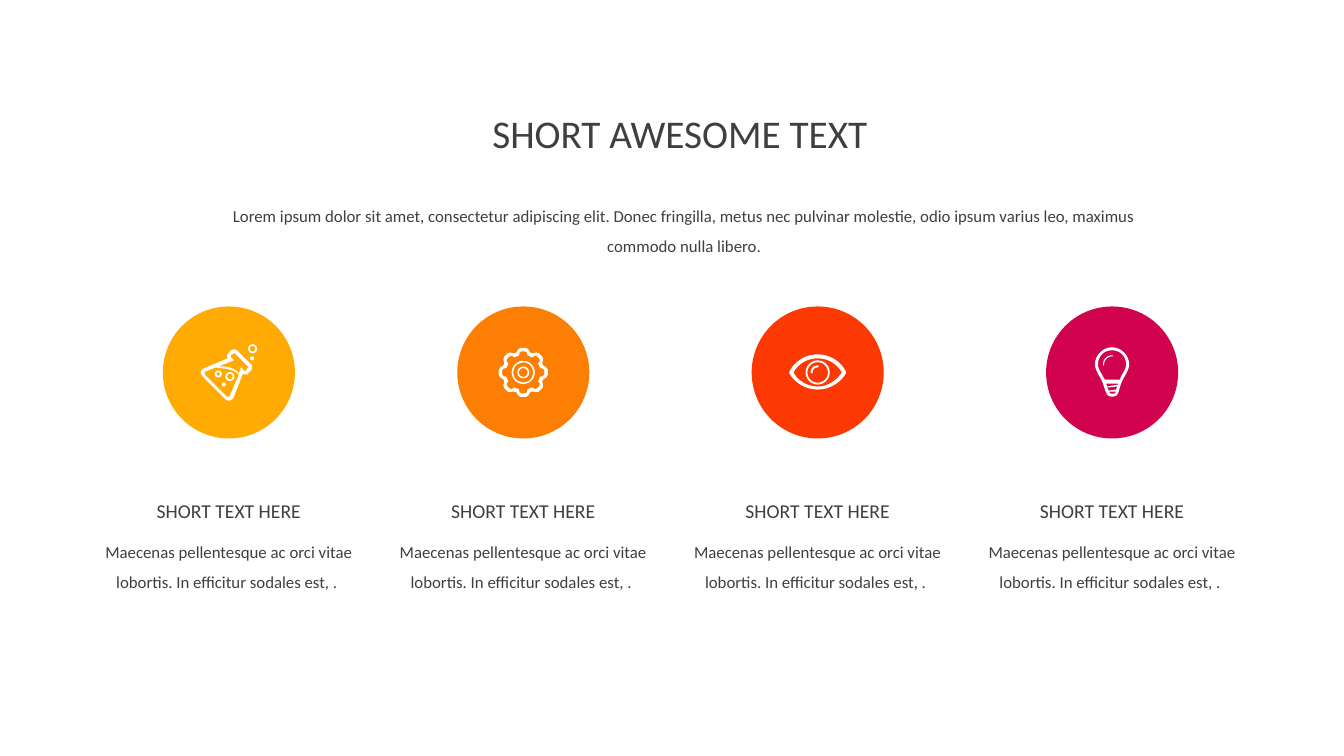
import math

import pptx
import pptx.dml.color
import pptx.enum.shapes
import pptx.enum.text
import pptx.util

Inches = pptx.util.Inches
SHAPE = pptx.enum.shapes.MSO_SHAPE
COLORS = {"text": "3F3F3F", "icon": "FFFFFF", "flask": "FFAB03",
          "gear": "FC7F03", "eye": "FC3903", "bulb": "D1024E"}
COLUMN_STEP = 2.92
CIRCLE_SIZE = 1.31
CURVE_STEPS = 8

# Icon units are hundredths of an inch from the circle's centre; pairs are lines, sixes are curves.
FLASK = [
    [(8, -22), (8, -22, 6, -23, 5, -23), (4, -23, 3, -22, 2, -22), (0, -19),
     (-1, -19, -2, -17, -2, -16), (-2, -15, -1, -15, -1, -14), (-25, -4),
     (-26, -4, -27, -2, -28, -1), (-28, 1, -27, 3, -26, 4), (-4, 26),
     (-3, 27, -2, 28, 0, 28), (1, 28, 4, 27, 5, 24), (14, 1),
     (15, 2, 15, 2, 16, 2), (18, 2, 19, 2, 19, 1), (22, -2),
     (23, -3, 23, -4, 23, -5), (23, -6, 23, -7, 22, -8)],
    [(1, 23), (1, 24, 1, 24, 0, 24), (-1, 24, -1, 24, -2, 24), (-24, 2),
     (-24, 2, -24, 1, -24, 0), (-24, 0, -24, -1, -23, -1), (-13, -5),
     (-5, -3, 2, -5, 10, 2)],
    [(19, -5), (17, -2), (17, -1, 16, -1, 15, -2), (12, -5), (10, 1),
     (5, -5, 0, -5, -5, -6), (-7, -6, -8, -6, -10, -6), (5, -12), (2, -15),
     (2, -16, 2, -16, 2, -17), (5, -19), (5, -19, 5, -19, 6, -19), (19, -6),
     (20, -5, 20, -5, 19, -5)],
]
EYE = [
    [(28, -1), (23, -11, 12, -18, 0, -18), (-12, -18, -23, -11, -28, -1),
     (-28, 0, -28, 0, -28, 1), (-23, 10, -12, 17, 0, 17), (12, 17, 23, 10, 28, 1)],
    [(0, 14), (-10, 14, -20, 8, -24, 0), (-19, -9, -10, -14, 0, -14),
     (10, -14, 19, -9, 24, 0), (19, 8, 10, 14, 0, 14)],
]
EYE_GLINT = [
    [(0, -7), (-4, -7, -7, -4, -7, 0), (-7, 0, -6, 1, -6, 1),
     (-6, 1, -5, 0, -5, 0), (-5, -3, -3, -5, 0, -5),
     (1, -5, 1, -6, 1, -6), (1, -7, 1, -7, 0, -7)],
]
BULB = [
    [(0, -25), (-9, -25, -17, -17, -17, -8), (-17, -2, -11, 5, -9, 11),
     (-6, 19, -6, 24, 0, 24), (7, 24, 6, 19, 9, 11), (11, 5, 17, -2, 17, -8),
     (17, -17, 9, -25, 0, -25)],
    [(4, 17), (-3, 18), (-4, 17, -4, 16, -5, 15), (5, 14), (5, 15, 4, 16, 4, 17)],
    [(-5, 14), (-5, 12, -6, 12, -6, 11), (6, 11), (6, 12)],
    [(0, 21), (-1, 21, -2, 21, -3, 19), (4, 19), (3, 21, 2, 21, 0, 21)],
    [(8, 7), (-7, 7), (-8, 6, -9, 4, -10, 2), (-12, -1, -14, -5, -14, -8),
     (-14, -16, -8, -22, 0, -22), (8, -22, 14, -16, 14, -8),
     (14, -5, 12, -1, 10, 2), (9, 4, 8, 6, 8, 7)],
]
BULB_GLINT = [
    [(0, -17), (-5, -17, -9, -13, -9, -8), (-9, -7, -9, -7, -9, -7),
     (-8, -7, -8, -7, -8, -8), (-8, -12, -4, -16, 0, -16), (1, -16), (1, -17, 0, -17, 0, -17)],
]
TOOTH_OUTER = [(-21, 20.8), (-17, 21.5), (-12, 23.5), (-6, 24.5),
               (6, 24.5), (12, 23.5), (17, 21.5), (21, 20.8)]
TOOTH_INNER = [(-14, 17.3), (-11, 19.9), (-5, 21), (5, 21), (11, 19.9), (14, 17.3)]


def rgb(name):
    """Return a named colour."""
    return pptx.dml.color.RGBColor.from_string(COLORS[name])


def paint(sp, color):
    """Give a shape a plain fill without line or shadow."""
    sp.shadow.inherit = False
    sp.fill.solid()
    sp.fill.fore_color.rgb = rgb(color)
    sp.line.fill.background()


def flatten(contour):
    """Turn lines and cubic curves into a list of points."""
    points = []
    for step in contour:
        if len(step) == 2:
            points.append(step)
            continue
        xs = (points[-1][0],) + step[0::2]
        ys = (points[-1][1],) + step[1::2]
        for i in range(1, CURVE_STEPS + 1):
            t = i / CURVE_STEPS
            weights = [math.comb(3, k) * t ** k * (1 - t) ** (3 - k) for k in range(4)]
            points.append(tuple(sum(w * v for w, v in zip(weights, vs)) for vs in (xs, ys)))
    return points


def gear_contour(tooth):
    """Repeat a tooth profile of angles and radii eight times round."""
    polar = [(math.radians(45 * i + angle), radius) for i in range(8) for angle, radius in tooth]
    return [(radius * math.sin(a), -radius * math.cos(a)) for a, radius in polar]


def add_outline(s, cx, cy, contours):
    """Draw contours as one white freeform around a centre."""
    builder = None
    for contour in contours:
        points = [(Inches(cx + x / 100), Inches(cy + y / 100)) for x, y in flatten(contour)]
        if builder is None:
            builder = s.shapes.build_freeform(*points[0], scale=1.0)
        else:
            builder.move_to(*points[0])
        builder.add_line_segments(points[1:], close=True)
    paint(builder.convert_to_shape(), "icon")


def add_round(s, cx, cy, x, y, size, thickness=0):
    """Draw a white dot, or a ring when a thickness is given."""
    kind = SHAPE.DONUT if thickness else SHAPE.OVAL
    sp = s.shapes.add_shape(kind, Inches(cx + (x - size / 2) / 100), Inches(cy + (y - size / 2) / 100),
                            Inches(size / 100), Inches(size / 100))
    if thickness:
        sp.adjustments[0] = thickness / size
    paint(sp, "icon")


ICONS = {
    "flask": ([FLASK], [(1, 4, 9, 1.7), (23.5, -23.5, 9, 1.7), (-10.5, 1.5, 7, 1.8),
                        (-5, 12, 4), (23, -14, 4)]),
    "gear": ([[gear_contour(TOOTH_OUTER), gear_contour(TOOTH_INNER)]],
             [(0, 0, 23, 1.5), (0, 0, 12, 1.6)]),
    "eye": ([EYE, EYE_GLINT], [(0, 0, 24, 1.8)]),
    "bulb": ([BULB, BULB_GLINT], []),
}


def write_text(sp, text, size, spacing=None):
    """Fill a text shape with one centred paragraph."""
    tf = sp.text_frame
    tf.word_wrap = True
    tf.vertical_anchor = pptx.enum.text.MSO_ANCHOR.TOP
    tf.auto_size = pptx.enum.text.MSO_AUTO_SIZE.SHAPE_TO_FIT_TEXT
    tf.text = text
    p = tf.paragraphs[0]
    p.alignment = pptx.enum.text.PP_ALIGN.CENTER
    p.line_spacing = spacing
    font = p.runs[0].font
    font.name = "Calibri"
    font.size = pptx.util.Pt(size)
    font.color.rgb = rgb("text")


def add_text(s, left, top, width, height, text, size):
    """Add a text box with open line spacing."""
    box = s.shapes.add_textbox(Inches(left), Inches(top), Inches(width), Inches(height))
    write_text(box, text, size, 1.5)


def add_header(s, left, top, width):
    """Place the title and the introduction below it."""
    title = s.shapes.title
    title.left, title.top = Inches(left), Inches(top)
    title.width, title.height = Inches(width), Inches(0.57)
    write_text(title, "SHORT AWESOME TEXT ", 28, 1.0)
    add_text(s, left, top + 0.86, width, 0.68,
             "Lorem ipsum dolor sit amet, consectetur adipiscing elit. Donec fringilla, "
             "metus nec pulvinar molestie, odio ipsum varius leo, maximus commodo nulla libero.", 12)


def add_feature(s, left, top, width, icon):
    """Place a circle with its icon, heading and description."""
    cx, cy = left + width / 2, top + CIRCLE_SIZE / 2
    circle = s.shapes.add_shape(SHAPE.OVAL, Inches(cx - CIRCLE_SIZE / 2), Inches(top),
                                Inches(CIRCLE_SIZE), Inches(CIRCLE_SIZE))
    paint(circle, icon)
    outlines, rounds = ICONS[icon]
    for contours in outlines:
        add_outline(s, cx, cy, contours)
    for item in rounds:
        add_round(s, cx, cy, *item)
    add_text(s, left, top + 1.74, width, 0.42, "SHORT TEXT HERE", 14)
    add_text(s, left, top + 2.18, width, 0.68,
             "Maecenas pellentesque ac orci vitae lobortis. In efficitur sodales est, . ", 12)


def main():
    """Build and save the slide."""
    prs = pptx.Presentation()
    prs.slide_width, prs.slide_height = Inches(13.33), Inches(7.5)
    s = prs.slides.add_slide(prs.slide_layouts[5])
    add_header(s, 2.06, 1.03, 9.45)
    for i, icon in enumerate(ICONS):
        add_feature(s, 0.94 + i * COLUMN_STEP, 3.04, 2.66, icon)
    prs.save("out.pptx")


if __name__ == "__main__":
    main()
